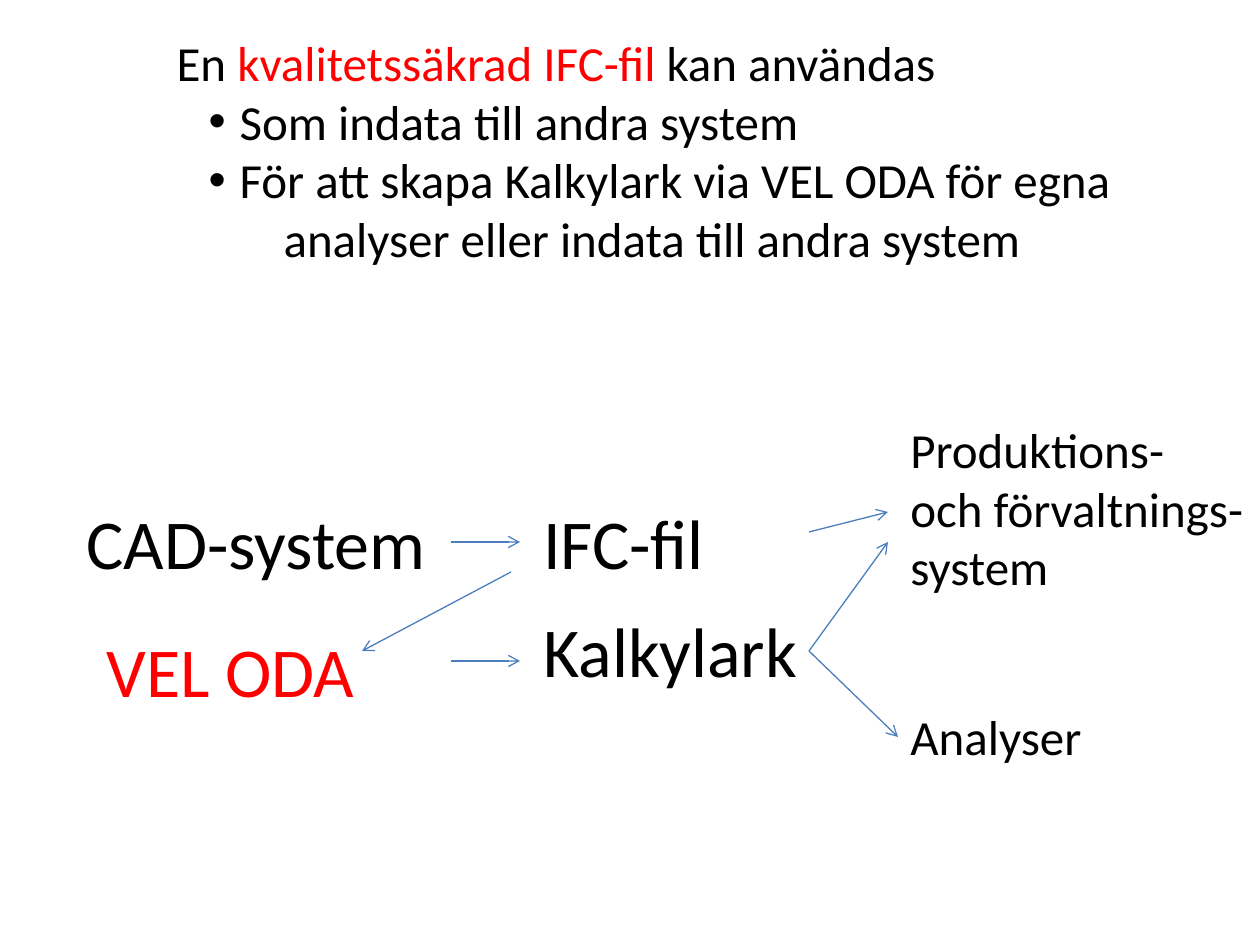
"""Build the slide on how a quality-assured IFC file can be used."""
import lxml.etree
import pptx
import pptx.dml.color
import pptx.enum.shapes
import pptx.enum.text
import pptx.oxml.ns
import pptx.util

PX = 914400 / 126
BLACK, RED, BLUE = "000000", "FF0000", "4B7EBC"
FONT = "Calibri"

INTRO_BOX = (164, 26, 963, 301)
INTRO = [
    ([("En ", BLACK), ("kvalitetssäkrad IFC-fil ", RED), ("kan användas", BLACK)],
     {"level": 0, "indent": (0, 0), "bullet": None}),
    ([("Som indata till andra system", BLACK)],
     {"level": 1, "indent": (63, -31), "bullet": "•"}),
    ([("För att skapa Kalkylark via VEL ODA för egna", BLACK)],
     {"level": 1, "indent": (63, -31), "bullet": "•"}),
    ([("analyser eller indata till andra system", BLACK)],
     {"level": 1, "indent": (107, 0), "bullet": None}),
]
LABELS = [
    ("CAD-system", (74, 493, 387, 97), 40, BLACK),
    ("IFC-fil", (531, 493, 189, 97), 40, BLACK),
    ("VEL ODA", (94, 621, 297, 97), 40, RED),
    ("Kalkylark", (531, 601, 285, 97), 40, BLACK),
    ("Produktions-\noch förvaltnings-\vsystem", (898, 413, 362, 190), 28, BLACK),
    ("Analyser", (898, 700, 198, 72), 28, BLACK),
]
ARROWS = [
    ((451, 542), (520, 542)),
    ((451, 661), (520, 661)),
    ((809, 532), (888, 512)),
    ((809, 651), (888, 542)),
    ((809, 651), (898, 737)),
    ((511, 572), (362, 651)),
]


def emu(*lengths):
    return [pptx.util.Emu(round(n * PX)) for n in lengths]


def rgb(color):
    return pptx.dml.color.RGBColor.from_string(color)


def add_element(parent, tag, **attrs):
    return lxml.etree.SubElement(parent, pptx.oxml.ns.qn(tag), attrs)


def set_all(obj, values):
    for name, value in values.items():
        setattr(obj, name, value)


def format_run(r, size, color):
    set_all(r.font, {"name": FONT, "size": pptx.util.Pt(size)})
    r.font.color.rgb = rgb(color)


def format_frame(tf):
    set_all(tf, {"word_wrap": True,
                 "auto_size": pptx.enum.text.MSO_AUTO_SIZE.NONE,
                 "vertical_anchor": pptx.enum.text.MSO_ANCHOR.TOP})


def fill_intro(sp):
    set_all(sp, dict(zip(("left", "top", "width", "height"), emu(*INTRO_BOX))))
    tf = sp.text_frame
    format_frame(tf)
    for i, (runs, style) in enumerate(INTRO):
        p = tf.add_paragraph() if i else tf.paragraphs[0]
        set_all(p, {"level": style["level"], "space_before": pptx.util.Pt(0)})
        pPr = p._p.get_or_add_pPr()
        for name, value in zip(("marL", "indent"), emu(*style["indent"])):
            pPr.set(name, str(value))
        if style["bullet"]:
            add_element(pPr, "a:buFont", typeface="Arial")
            add_element(pPr, "a:buChar", char=style["bullet"])
        else:
            add_element(pPr, "a:buNone")
        for text, color in runs:
            r = p.add_run()
            r.text = text
            format_run(r, 28, color)


def add_label(slide, text, box, size, color):
    tf = slide.shapes.add_textbox(*emu(*box)).text_frame
    format_frame(tf)
    tf.text = text
    for p in tf.paragraphs:
        for r in p.runs:
            format_run(r, size, color)


def add_arrow(slide, start, end):
    kind = pptx.enum.shapes.MSO_CONNECTOR.STRAIGHT
    sp = slide.shapes.add_connector(kind, *emu(*start, *end))
    sp.line.color.rgb = rgb(BLUE)
    sp.line.width = pptx.util.Pt(0.75)
    add_element(sp.line._get_or_add_ln(), "a:tailEnd", type="arrow")
    add_element(sp._element.spPr, "a:effectLst")


def main():
    prs = pptx.Presentation()
    set_all(prs, {"slide_width": pptx.util.Inches(10),
                  "slide_height": pptx.util.Inches(7.5)})
    slide = prs.slides.add_slide(prs.slide_layouts[1])
    title = slide.shapes.title._element
    title.getparent().remove(title)
    fill_intro(slide.placeholders[1])
    for label in LABELS:
        add_label(slide, *label)
    for arrow in ARROWS:
        add_arrow(slide, *arrow)
    prs.save("out.pptx")


if __name__ == "__main__":
    main()
